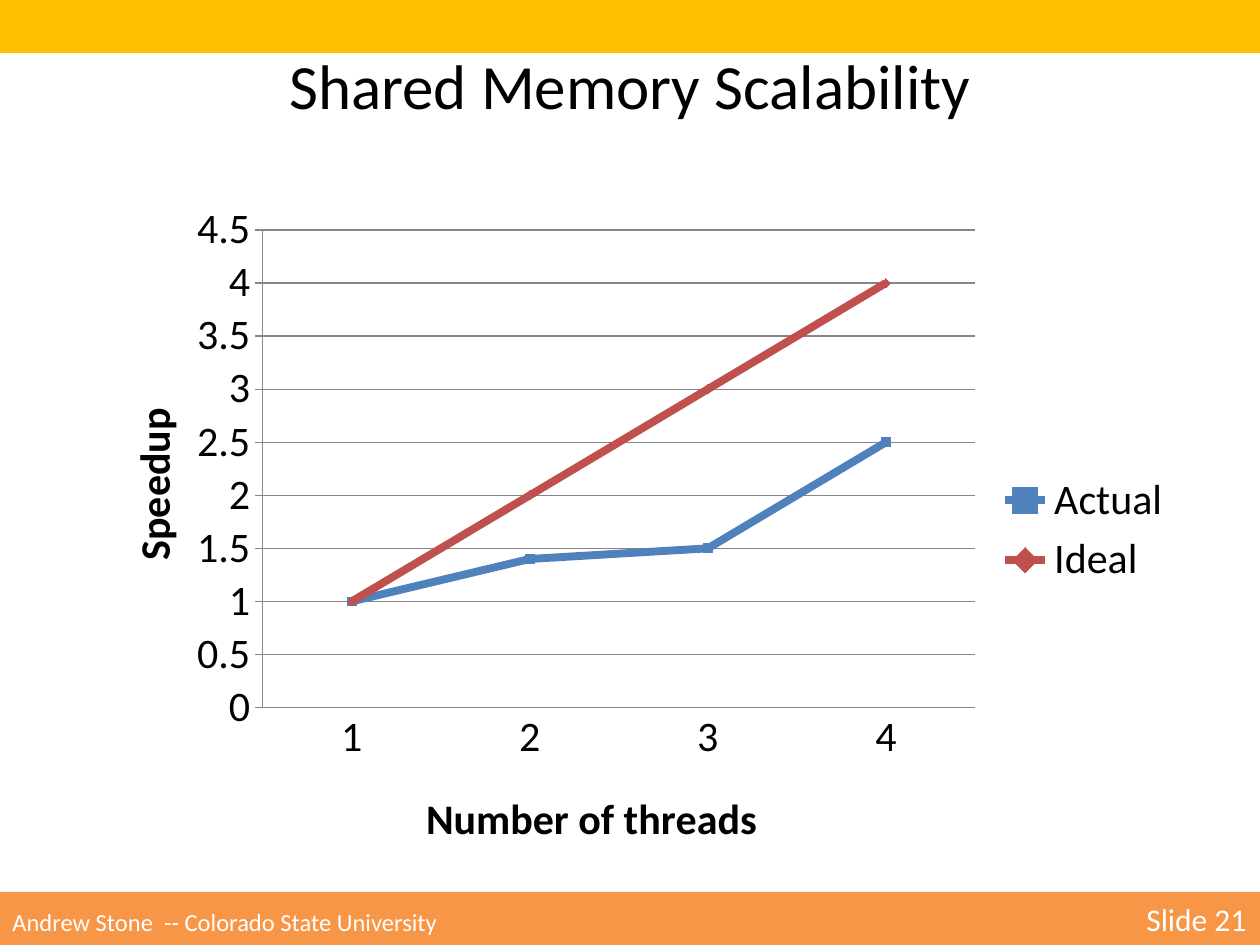
from dataclasses import dataclass

from lxml.etree import SubElement
from pptx import Presentation
from pptx.chart.data import CategoryChartData
from pptx.dml.color import RGBColor
from pptx.enum.chart import XL_CHART_TYPE, XL_LEGEND_POSITION, XL_MARKER_STYLE, XL_TICK_MARK
from pptx.enum.shapes import MSO_SHAPE
from pptx.enum.text import MSO_ANCHOR, MSO_AUTO_SIZE, PP_ALIGN
from pptx.oxml import parse_xml
from pptx.oxml.ns import nsdecls, qn
from pptx.util import Cm, Pt


@dataclass(frozen=True)
class Theme:
    font: str = "Calibri"
    text: RGBColor = RGBColor(0, 0, 0)
    footer_text: RGBColor = RGBColor(255, 255, 255)
    header: RGBColor = RGBColor(0xFF, 0xC0, 0x00)
    footer: RGBColor = RGBColor(0xF7, 0x96, 0x46)
    axis: RGBColor = RGBColor(0x86, 0x86, 0x86)
    actual: RGBColor = RGBColor(0x4F, 0x81, 0xBD)
    ideal: RGBColor = RGBColor(0xC0, 0x50, 0x4D)
    title_size: Pt = Pt(36)
    chart_size: Pt = Pt(24)
    number_size: Pt = Pt(18)
    footer_size: Pt = Pt(14)


THEME = Theme()
SLIDE_WIDTH, SLIDE_HEIGHT = Cm(25.4), Cm(19.05)
BAND_HEIGHT = Cm(1.07)


def add_text(paragraph, text, *, size, color=THEME.text, bold=False):
    run = paragraph.add_run()
    run.text = text
    run.font.name = THEME.font
    run.font.size = size
    run.font.bold = bold
    run.font.color.rgb = color


def add_band(slide, box, color):
    band = slide.shapes.add_shape(MSO_SHAPE.RECTANGLE, *box)
    band.shadow.inherit = False
    band.fill.solid()
    band.fill.fore_color.rgb = color
    band.line.fill.background()
    return band


def add_title(slide, box, text):
    title = slide.shapes.title
    title.left, title.top, title.width, title.height = box
    frame = title.text_frame
    frame.word_wrap = True
    frame.auto_size = MSO_AUTO_SIZE.NONE
    frame.vertical_anchor = MSO_ANCHOR.TOP
    paragraph = frame.paragraphs[0]
    paragraph.alignment = PP_ALIGN.CENTER
    add_text(paragraph, text, size=THEME.title_size)


def add_footer(slide, box, author, number):
    frame = add_band(slide, box, THEME.footer).text_frame
    frame.vertical_anchor = MSO_ANCHOR.MIDDLE
    paragraph = frame.paragraphs[0]
    paragraph.alignment = PP_ALIGN.LEFT
    tabs = SubElement(paragraph._p.get_or_add_pPr(), qn("a:tabLst"))
    SubElement(tabs, qn("a:tab"), pos=str(Cm(22.86)), algn="l")
    add_text(paragraph, f"{author} \t", size=THEME.footer_size, color=THEME.footer_text)
    add_text(paragraph, number, size=THEME.number_size, color=THEME.footer_text)


def manual_layout(x, y, size=None):
    """Layout element in fractions of the chart; a size makes it an inner plot layout."""
    target = '<c:layoutTarget val="inner"/>' if size else ""
    extent = f'<c:w val="{size[0]}"/><c:h val="{size[1]}"/>' if size else ""
    return parse_xml(
        f'<c:layout {nsdecls("c")}><c:manualLayout>{target}'
        '<c:xMode val="edge"/><c:yMode val="edge"/>'
        f'<c:x val="{x}"/><c:y val="{y}"/>{extent}</c:manualLayout></c:layout>'
    )


def set_layout(parent, layout, after=None):
    for existing in parent.findall(qn("c:layout")):
        parent.remove(existing)
    if after is None:
        parent.insert(0, layout)
    else:
        parent.find(qn(after)).addnext(layout)


def format_axis(axis, title, position, tick_mark):
    axis.major_tick_mark = tick_mark
    axis.minor_tick_mark = XL_TICK_MARK.NONE
    axis.format.line.color.rgb = THEME.axis
    axis.format.line.width = Pt(0.75)
    axis.tick_labels.font.size = THEME.chart_size
    paragraph = axis.axis_title.text_frame.paragraphs[0]
    add_text(paragraph, title, size=THEME.chart_size, bold=True)
    set_layout(axis.axis_title._element, manual_layout(*position), after="c:tx")


def format_series(series, color, marker_style):
    series.smooth = False
    series.format.line.color.rgb = color
    series.format.line.width = Pt(4.5)
    series.marker.style = marker_style
    series.marker.size = 5
    series.marker.format.fill.solid()
    series.marker.format.fill.fore_color.rgb = color
    series.marker.format.line.color.rgb = color


def add_speedup_chart(slide, box):
    data = CategoryChartData()
    data.categories = ["1", "2", "3", "4"]
    data.add_series("Actual", (1, 1.4, 1.5, 2.5))
    data.add_series("Ideal", (1, 2, 3, 4))
    chart = slide.shapes.add_chart(XL_CHART_TYPE.LINE_MARKERS, *box, data).chart
    chart.has_title = False
    chart.font.name = THEME.font
    chart.font.size = THEME.chart_size
    chart.font.color.rgb = THEME.text
    chart.has_legend = True
    chart.legend.position = XL_LEGEND_POSITION.RIGHT
    chart.legend.include_in_layout = False
    chart.legend.font.size = THEME.chart_size

    plot = chart.plots[0]
    plot.vary_by_categories = False
    styles = (
        (THEME.actual, XL_MARKER_STYLE.SQUARE),
        (THEME.ideal, XL_MARKER_STYLE.DIAMOND),
    )
    for series, style in zip(plot.series, styles):
        format_series(series, *style)

    format_axis(chart.category_axis, "Number of threads", (0.31, 0.87), XL_TICK_MARK.NONE)
    value_axis = chart.value_axis
    format_axis(value_axis, "Speedup", (0.04, 0.31), XL_TICK_MARK.OUTSIDE)
    value_axis.minimum_scale, value_axis.maximum_scale = 0, 4.5
    value_axis.major_unit = 0.5
    value_axis.tick_labels.number_format = "General"
    value_axis.tick_labels.number_format_is_linked = False
    value_axis.major_gridlines.format.line.color.rgb = THEME.axis
    value_axis.major_gridlines.format.line.width = Pt(0.75)
    plot_area = chart._chartSpace.chart.plotArea
    set_layout(plot_area, manual_layout(0.17, 0.06, size=(0.64, 0.7)))


def main():
    presentation = Presentation()
    presentation.slide_width, presentation.slide_height = SLIDE_WIDTH, SLIDE_HEIGHT
    slide = presentation.slides.add_slide(presentation.slide_layouts.get_by_name("Title Only"))
    add_band(slide, (0, 0, SLIDE_WIDTH, BAND_HEIGHT), THEME.header)
    add_title(slide, (Cm(0.42), Cm(0.81), Cm(24.56), Cm(1.8)), "Shared Memory Scalability")
    footer_box = (0, SLIDE_HEIGHT - BAND_HEIGHT, SLIDE_WIDTH, BAND_HEIGHT)
    add_footer(slide, footer_box, "Andrew Stone  -- Colorado State University", "Slide 21")
    add_speedup_chart(slide, (Cm(1.48), Cm(3.81), Cm(22.44), Cm(13.76)))
    presentation.save("out.pptx")


if __name__ == "__main__":
    main()
